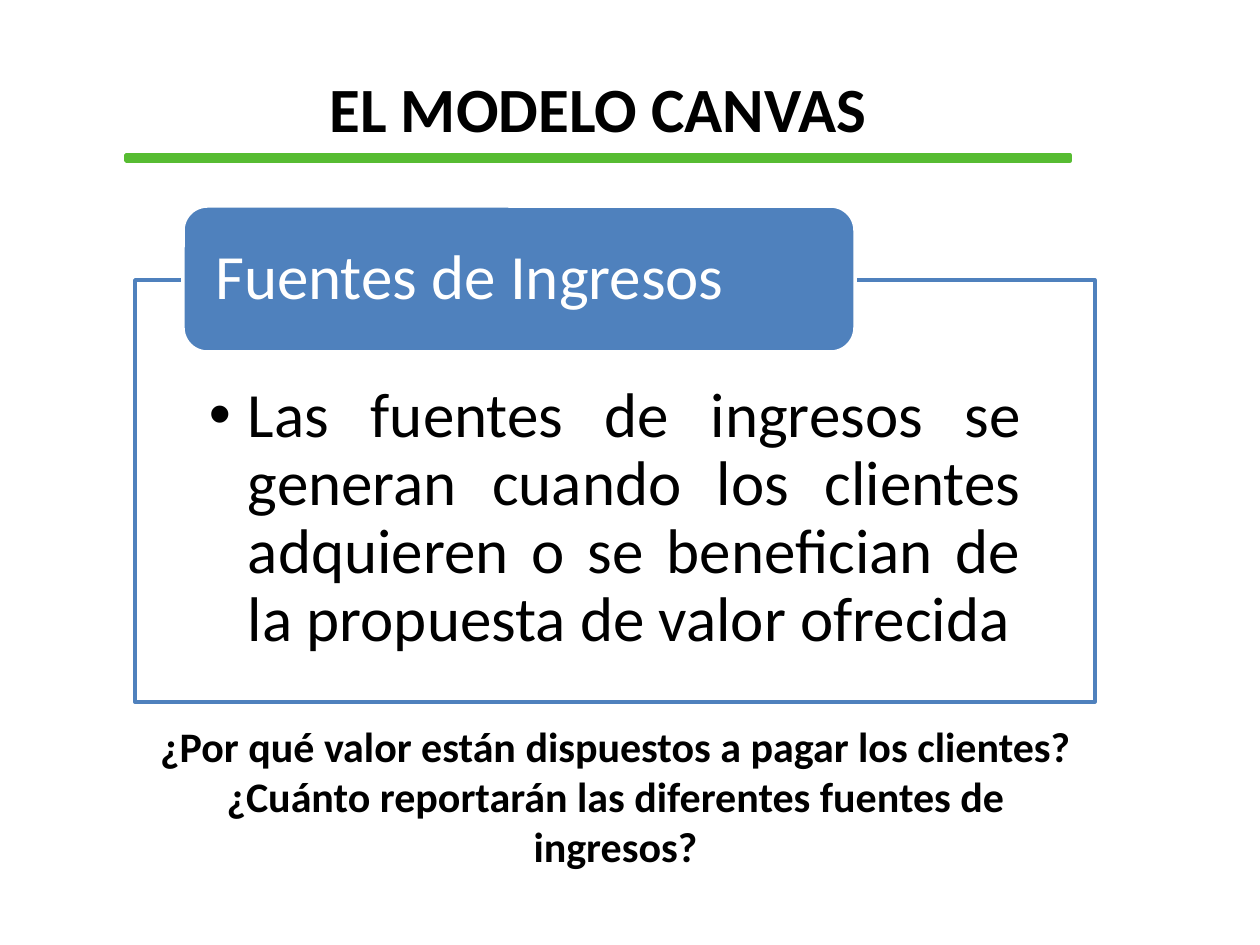
from lxml.etree import SubElement
from pptx import Presentation
from pptx.dml.color import RGBColor
from pptx.enum.shapes import MSO_SHAPE
from pptx.enum.text import MSO_ANCHOR, PP_ALIGN
from pptx.oxml.ns import qn
from pptx.util import Pt

EMU_PER_PX = 914400 / 126
BLACK = RGBColor(0x00, 0x00, 0x00)
WHITE = RGBColor(0xFF, 0xFF, 0xFF)
GREEN = RGBColor(0x57, 0xBC, 0x32)
BLUE = RGBColor(0x4F, 0x81, 0xBD)


def px(n):
    return round(n * EMU_PER_PX)


def add_box(slide, kind, box, fill, line):
    s = slide.shapes.add_shape(kind, *map(px, box))
    s.shadow.inherit = False
    s.fill.solid()
    s.fill.fore_color.rgb = fill
    s.line.color.rgb = line
    s.line.width = Pt(2)
    return s


def set_insets(tf, left, top, right, bottom):
    tf.margin_left, tf.margin_top = px(left), px(top)
    tf.margin_right, tf.margin_bottom = px(right), px(bottom)


def write(tf, text, size, color, align, bold=False, spacing=None):
    tf.word_wrap = True
    tf.text = text
    for p in tf.paragraphs:
        p.alignment = align
        p.line_spacing = spacing
        for r in p.runs:
            r.font.name = "Calibri"
            r.font.size = Pt(size)
            r.font.bold = bold
            r.font.color.rgb = color


def add_heading(slide, box, text, size):
    tf = slide.shapes.add_textbox(*map(px, box)).text_frame
    write(tf, text, size, BLACK, PP_ALIGN.CENTER, bold=True)


def add_panel(slide, box, text):
    s = add_box(slide, MSO_SHAPE.RECTANGLE, box, WHITE, BLUE)
    color = s.fill._xPr.find(qn("a:solidFill"))[0]
    SubElement(color, qn("a:alpha"), val="90000")
    tf = s.text_frame
    tf.vertical_anchor = MSO_ANCHOR.TOP
    set_insets(tf, 74, 103, 74, 35)
    write(tf, text, 36, BLACK, PP_ALIGN.JUSTIFY, spacing=0.9)
    # Bullet with a hanging indent
    pPr = tf.paragraphs[0]._p.get_or_add_pPr()
    pPr.set("lvl", "1")
    pPr.set("marL", str(px(39)))
    pPr.set("indent", str(-px(39)))
    SubElement(pPr, qn("a:buFont"), typeface="Arial")
    SubElement(pPr, qn("a:buChar"), char="•")


def add_tab(slide, box, text):
    s = add_box(slide, MSO_SHAPE.ROUNDED_RECTANGLE, box, BLUE, WHITE)
    tf = s.text_frame
    tf.vertical_anchor = MSO_ANCHOR.MIDDLE
    set_insets(tf, 25, 0, 25, 0)
    write(tf, text, 36, WHITE, PP_ALIGN.LEFT, spacing=0.9)


def main():
    prs = Presentation()
    prs.slide_width, prs.slide_height = px(1260), px(945)
    slide = prs.slides.add_slide(prs.slide_layouts[6])

    # Title and green rule
    add_box(slide, MSO_SHAPE.RECTANGLE, (126, 155, 944, 6), GREEN, GREEN)
    add_heading(slide, (283, 63, 630, 89), "EL MODELO CANVAS", 36)

    # Definition panel with its overlapping tab
    add_panel(slide, (135, 280, 960, 422),
              "Las fuentes de ingresos se generan cuando los clientes "
              "adquieren o se benefician de la propuesta de valor ofrecida")
    add_tab(slide, (183, 206, 672, 146), "Fuentes de Ingresos")

    # Closing questions
    add_heading(slide, (136, 714, 959, 165),
                "¿Por qué valor están dispuestos a pagar los clientes?\n"
                "¿Cuánto reportarán las diferentes fuentes de ingresos?", 24)

    prs.save("out.pptx")


if __name__ == "__main__":
    main()
